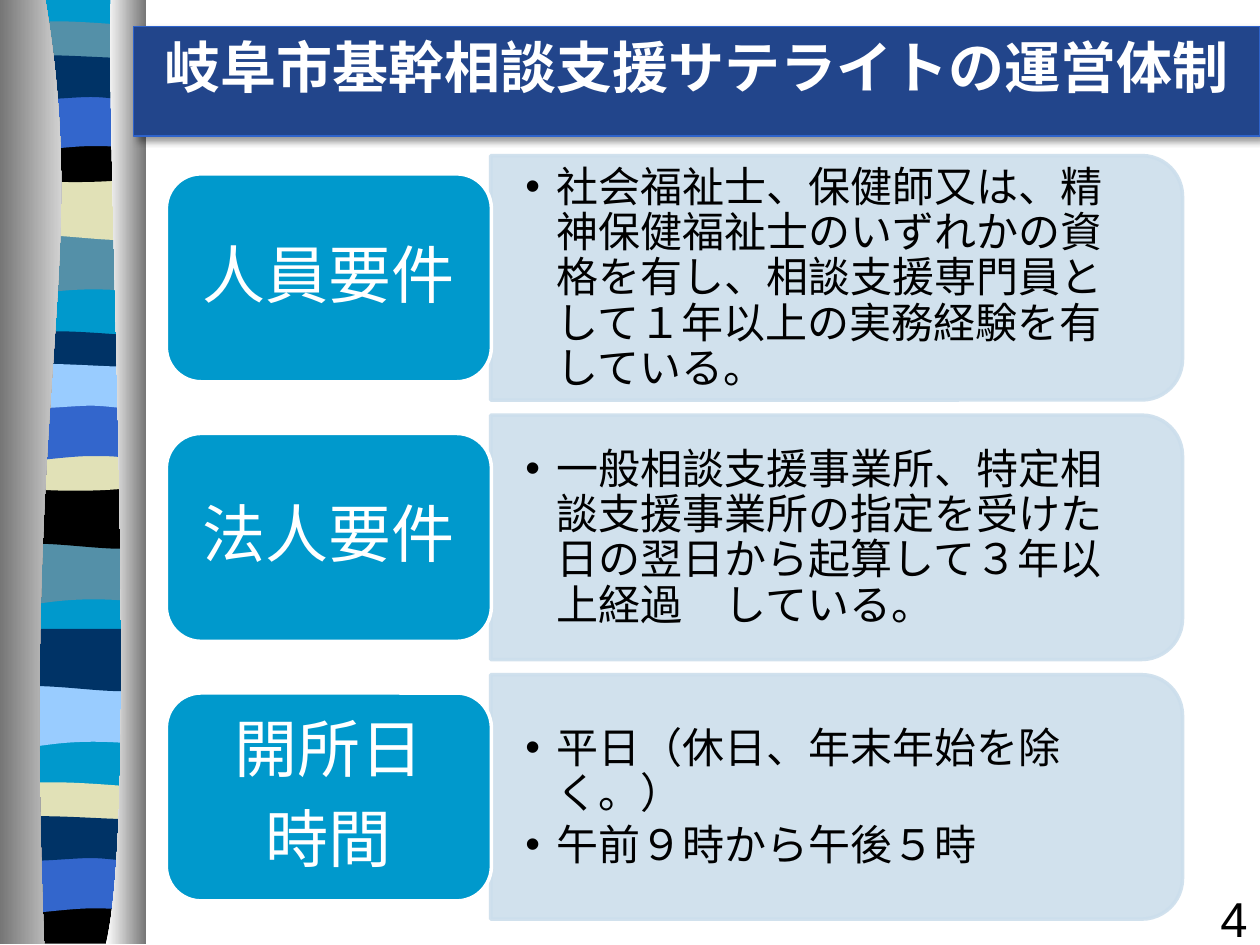
import dataclasses

import pptx
import pptx.dml.color
import pptx.enum.shapes
import pptx.enum.text
import pptx.oxml
import pptx.oxml.ns
import pptx.util
from pptx.util import Inches

SHAPE = pptx.enum.shapes.MSO_SHAPE
ALIGN = pptx.enum.text.PP_ALIGN
ANCHOR = pptx.enum.text.MSO_ANCHOR
NS = pptx.oxml.ns.nsdecls("a")
qn = pptx.oxml.ns.qn


@dataclasses.dataclass(frozen=True)
class Theme:
    cyan: str = "0099CC"
    steel: str = "5490A8"
    navy: str = "003366"
    blue: str = "3366CC"
    sand: str = "E1E1B7"
    sky: str = "99CCFF"
    black: str = "000000"
    white: str = "FFFFFF"
    grey: str = "767676"
    banner: str = "22458B"
    banner_edge: str = "2E63CB"
    panel: str = "CCDEEC"
    cjk: str = "Noto Sans CJK JP"
    latin: str = "Arial"
    title_size: int = 32
    label_size: int = 36
    body_size: int = 24
    number_size: int = 28


T = Theme()
W = 1.09
STRIP = [[(W, 0)], [(W, 7.48)], [(0, 7.48)], [(0, 0)]]
SWELL = [[(W, 0)], [(W, 0), (W, 0.47), (W, 0.47)],
         [(0.34, 0.39), (0.19, 0.55), (0, 0.47)], [(0, 0)]]
ROLL = [[(W, 0)], [(W, 0.47)], [(0.91, 0.55), (0.34, 0.41), (0, 0.47)], [(0, 0)]]
LENS = [[(W, 0.05)], [(W, 0.29)], [(0.91, 0.34), (0.19, 0.34), (0, 0.29)], [(0, 0.05)],
        [(0.07, 0), (0.24, 0.01), (0.42, 0.01)], [(0.6, 0.01), (0.95, 0.04), (W, 0.05)]]
SAG = [[(W, 0)], [(W, 0.32)], [(0.91, 0.38), (0.19, 0.38), (0, 0.32)], [(0, 0)],
       [(0.66, 0.05), (0.85, 0), (W, 0)]]
BASE = [[(W, 0)], [(W, 0.37)], [(0, 0.37)], [(0, 0)], [(0.66, 0.05), (0.85, 0), (W, 0)]]
HUMP = [[(W, 0)], [(W, 0), (W, 0.47), (W, 0.47)], [(0.92, 0.42), (0.85, 0.42), (0.67, 0.42)],
        [(0.49, 0.42), (0.17, 0.47), (0, 0.47)], [(0, 0)]]
RIPPLE = [[(W, 0.05)], [(W, 0.36)], [(1.02, 0.41), (0.85, 0.36), (0.67, 0.36)],
          [(0.49, 0.36), (0.12, 0.41), (0, 0.36)], [(0, 0.05)],
          [(0.16, 0), (0.74, 0.05), (0.92, 0.05)], [(1.1, 0.05), (1.05, 0.05), (W, 0.05)]]
BANDS = [
    (STRIP, 0, T.cyan),
    (SWELL, 1.85, T.steel), (ROLL, 1.41, T.sand), (LENS, 0.16, T.steel),
    (SAG, 1.08, T.black), (HUMP, 0.74, T.blue), (RIPPLE, 0.41, T.navy),
    (SWELL, 4.31, T.steel), (ROLL, 3.86, T.black), (LENS, 2.62, T.navy),
    (SAG, 3.53, T.sand), (HUMP, 3.2, T.blue), (RIPPLE, 2.86, T.sky),
    (SWELL, 5.44, T.sky), (ROLL, 4.99, T.navy), (LENS, 6.2, T.sand),
    (BASE, 7.12, T.black), (HUMP, 6.79, T.blue), (RIPPLE, 6.45, T.navy),
]
LEFT_CURTAIN = [[(0.36, 0)], [(0.72, 2.16), (0.17, 2.96), (0.35, 7.49)], [(0, 7.49)], [(0, 0)]]
RIGHT_CURTAIN = [[(0.88, 0)], [(0.84, 1.25), (1.11, 6.46), (0.84, 7.49)],
                 [(1.16, 7.49)], [(1.16, 0)]]
ROWS = [
    (["人員要件"],
     ["社会福祉士、保健師又は、精神保健福祉士のいずれかの資格を有し、相談支援専門員として１年以上の実務経験を有している。"]),
    (["法人要件"],
     ["一般相談支援事業所、特定相談支援事業所の指定を受けた日の翌日から起算して３年以上経過　している。"]),
    (["開所日", "時間"],
     ["平日（休日、年末年始を除く。）", "午前９時から午後５時"]),
]


def rgb(color):
    return pptx.dml.color.RGBColor.from_string(color)


def write(tf, lines, size, color, font=T.cjk, bold=False, align=ALIGN.LEFT,
          anchor=ANCHOR.TOP, margins=(0.1, 0.05), spacing=1.0, after=0, bullet=False):
    tf.word_wrap = True
    tf.auto_size = pptx.enum.text.MSO_AUTO_SIZE.NONE
    tf.vertical_anchor = anchor
    tf.margin_left = tf.margin_right = Inches(margins[0])
    tf.margin_top = tf.margin_bottom = Inches(margins[1])
    for i, line in enumerate(lines):
        p = tf.add_paragraph() if i else tf.paragraphs[0]
        p.alignment, p.line_spacing = align, spacing
        p.space_before, p.space_after = pptx.util.Pt(0), pptx.util.Pt(after)
        if bullet:
            p.level = 1
            pPr = p._p.get_or_add_pPr()
            pPr.set("marL", str(Inches(0.25)))
            pPr.set("indent", str(-Inches(0.25)))
            pPr.append(pptx.oxml.parse_xml(f'<a:buFont {NS} typeface="{T.latin}"/>'))
            pPr.append(pptx.oxml.parse_xml(f'<a:buChar {NS} char="•"/>'))
        r = p.add_run()
        r.text = line
        r.font.size, r.font.bold, r.font.name = pptx.util.Pt(size), bold, font
        r.font.color.rgb = rgb(color)
        r._r.get_or_add_rPr().append(
            pptx.oxml.parse_xml(f'<a:ea {NS} typeface="{T.cjk}"/>'))


class Deck:
    """Holds the theme and the current slide, and draws each kind of element."""

    def __init__(self, prs, theme):
        self.theme = theme
        self.s = prs.slides.add_slide(prs.slide_layouts[4])

    def paint(self, sp, fill, line=None, width=0, alpha=None):
        sp.fill.solid()
        sp.fill.fore_color.rgb = rgb(fill)
        if line:
            sp.line.color.rgb = rgb(line)
            sp.line.width = pptx.util.Pt(width)
        else:
            sp.line.fill.background()
        if alpha:
            for clr in sp._element.spPr.iter(qn("a:srgbClr")):
                clr.append(pptx.oxml.parse_xml(f'<a:alpha {NS} val="{alpha * 1000}"/>'))

    def outline(self, segments, left=0, top=0):
        emu = [(Inches(left + x), Inches(top + y)) for seg in segments for x, y in seg]
        builder = self.s.shapes.build_freeform(*emu[0])
        builder.add_line_segments(emu[1:], close=True)
        sp = builder.convert_to_shape()
        sp.shadow.inherit = False
        lines = iter(list(sp._element.iter(qn("a:lnTo"))))
        for seg in segments[1:]:
            first, *rest = [next(lines) for _ in seg]
            if rest:
                bezier = pptx.oxml.parse_xml(f"<a:cubicBezTo {NS}/>")
                first.addprevious(bezier)
                for line in (first, *rest):
                    bezier.append(line[0])
                    line.getparent().remove(line)
        return sp

    def curtain(self, segments, start, end):
        sp = self.outline(segments)
        sp.line.fill.background()
        sp.fill.gradient()
        sp.fill.gradient_angle = 0
        for stop, color, at in zip(sp.fill.gradient_stops, (start, end), (0, 1)):
            stop.color.rgb = rgb(color)
            stop.position = at

    def place(self, sp, left, top, width, height):
        sp.left, sp.top = Inches(left), Inches(top)
        sp.width, sp.height = Inches(width), Inches(height)
        self.s.shapes._spTree.append(sp._element)

    def title(self, text):
        t, sp = self.theme, self.s.shapes.title
        self.place(sp, 1.06, 0.21, 8.94, 0.87)
        self.paint(sp, t.banner, t.banner_edge, 0.75)
        pt = pptx.util.Pt
        sp._element.spPr.append(pptx.oxml.parse_xml(
            f'<a:effectLst {NS}><a:outerShdw blurRad="{pt(4)}" dist="{pt(3)}" '
            f'dir="2700000" rotWithShape="0"><a:srgbClr val="{t.black}">'
            '<a:alpha val="38000"/></a:srgbClr></a:outerShdw></a:effectLst>'))
        write(sp.text_frame, [text], t.title_size, t.white, bold=True, align=ALIGN.CENTER)

    def shape(self, kind, left, top, width, height):
        sp = self.s.shapes.add_shape(kind, *map(Inches, (left, top, width, height)))
        sp.shadow.inherit = False
        return sp

    def text(self, lines, left, top, width, height, size, color, **style):
        sp = self.s.shapes.add_textbox(*map(Inches, (left, top, width, height)))
        write(sp.text_frame, lines, size, color, font=self.theme.latin, **style)

    def panel(self, idx, top, lines):
        t = self.theme
        sp = self.shape(SHAPE.ROUND_2_SAME_RECTANGLE, 5.67, top - 1.92, 1.94, 5.49)
        sp.rotation = 90
        self.paint(sp, t.panel, t.panel, 2, alpha=90)
        body = self.s.placeholders[idx]
        self.place(body, 3.9, top - 0.04, 5.4, 1.75)
        write(body.text_frame, lines, t.body_size, t.black, anchor=ANCHOR.MIDDLE,
              margins=(0.27, 0.14), spacing=0.9, after=3.6, bullet=True)

    def label(self, top, lines):
        t = self.theme
        sp = self.shape(SHAPE.ROUNDED_RECTANGLE, 1.32, top, 2.58, 1.65)
        self.paint(sp, t.cyan, t.white, 2)
        self.text(lines, 1.4, top + 0.08, 2.42, 1.49, t.label_size, t.white,
                  align=ALIGN.CENTER, anchor=ANCHOR.MIDDLE, margins=(0.15, 0.07),
                  spacing=0.9, after=12.6)


def main():
    prs = pptx.Presentation()
    prs.slide_width, prs.slide_height = Inches(10), Inches(7.5)
    deck = Deck(prs, T)
    for segments, top, color in BANDS:
        deck.paint(deck.outline(segments, 0.05, top), color)
    deck.curtain(LEFT_CURTAIN, T.grey, T.white)
    deck.curtain(RIGHT_CURTAIN, T.white, T.grey)
    deck.title("岐阜市基幹相談支援サテライトの運営体制")
    for i, (label, lines) in enumerate(ROWS):
        top = 1.38 + 2.06 * i
        deck.panel(i + 1, top, lines)
        deck.label(top, label)
    deck.text(["4"], 7.92, 7, 2.08, 0.5, T.number_size, T.black, align=ALIGN.RIGHT)
    spare = deck.s.placeholders[4]._element
    spare.getparent().remove(spare)
    prs.save("out.pptx")


if __name__ == "__main__":
    main()
